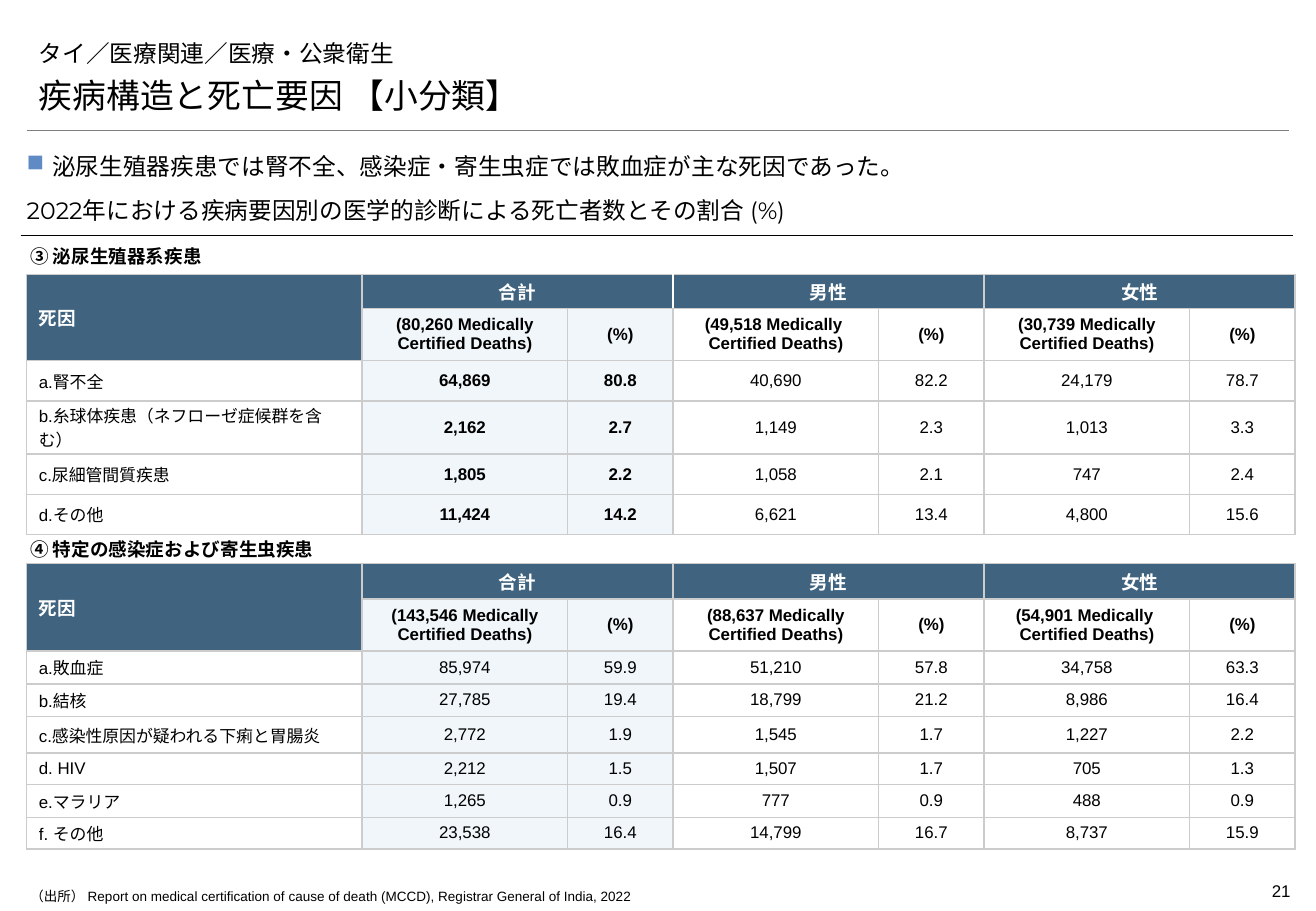
from dataclasses import dataclass
from lxml.etree import SubElement
from pptx import Presentation
from pptx.dml.color import RGBColor as RGB
from pptx.enum.text import MSO_ANCHOR as ANCHOR, PP_ALIGN as ALIGN
from pptx.oxml import parse_xml
from pptx.oxml.ns import nsdecls, qn
from pptx.util import Inches, Pt


@dataclass(frozen=True)
class Theme:
    black: str = "000000"
    white: str = "FFFFFF"
    head: str = "40647F"
    tint: str = "F0F6F9"
    grid: str = "CCCCCC"
    rule: str = "7F7F7F"
    bullet: str = "5F8AC3"
    sans: str = "Arial"
    display: str = "Montserrat"
    title: int = 20
    lead: int = 14
    label: int = 11
    body: int = 10
    note: int = 8


theme = Theme()
deck = Presentation()
deck.slide_width, deck.slide_height = Inches(10.83), Inches(7.5)
slide = deck.slides.add_slide(deck.slide_layouts[6])


def style(para, size, face=theme.sans, bold=False, color=theme.black, align=ALIGN.LEFT):
    para.alignment = align
    font = para.font
    font.size, font.name, font.bold = Pt(size), face, bold
    font.color.rgb = RGB.from_string(color)


def add_text(text, box, size, face=theme.sans, bold=False, align=ALIGN.LEFT,
             anchor=ANCHOR.TOP, pads=(0.1, 0.05, 0.1, 0.05)):
    frame = slide.shapes.add_textbox(*map(Inches, box)).text_frame
    frame.word_wrap, frame.vertical_anchor = True, anchor
    (frame.margin_left, frame.margin_top,
     frame.margin_right, frame.margin_bottom) = map(Inches, pads)
    para = frame.paragraphs[0]
    para.text = text
    style(para, size, face, bold, align=align)
    return para


# Title and heading lines
for left, right, top, color, width in [(0.22, 10.61, 1.07, theme.rule, 0.25),
                                       (0.17, 10.64, 1.94, theme.black, 0.75)]:
    line = slide.shapes.add_connector(1, Inches(left), Inches(top), Inches(right), Inches(top))
    line.line.color.rgb = RGB.from_string(color)
    line.line.width = Pt(width)
    SubElement(line._element.spPr, qn("a:effectLst"))

add_text("タイ／医療関連／医療・公衆衛生", (0.22, 0.26, 10.39, 0.34),
         theme.lead, theme.display, anchor=ANCHOR.BOTTOM)
add_text("疾病構造と死亡要因 【小分類】", (0.22, 0.56, 10.4, 0.44),
         theme.title, theme.display, anchor=ANCHOR.BOTTOM)
add_text("2022年における疾病要因別の医学的診断による死亡者数とその割合 (%)",
         (0.22, 1.62, 10.42, 0.31), theme.lead, theme.display,
         anchor=ANCHOR.BOTTOM, pads=(0, 0.05, 0, 0.08))

# Key message with a square bullet
point = add_text("泌尿生殖器疾患では腎不全、感染症・寄生虫症では敗血症が主な死因であった。",
                 (0.22, 1.23, 10.39, 0.24), theme.lead, align=ALIGN.JUSTIFY, pads=(0,) * 4)
point.line_spacing, point.space_after = 1.1, Pt(2)
props = point._p.get_or_add_pPr()
props.set("marL", str(Inches(0.21)))
props.set("indent", str(-Inches(0.21)))
mark = [f'<a:buClr {nsdecls("a")}><a:srgbClr val="{theme.bullet}"/></a:buClr>',
        f'<a:buChar {nsdecls("a")} char="■"/>']
spot = props.index(props.find(qn("a:spcAft"))) + 1
for step, xml in enumerate(mark):
    props.insert(spot + step, parse_xml(xml))

# Death tables: label, label top, table top, row heights, bold totals,
# white header divider, certified deaths, rows
tables = [
    ("③ 泌尿生殖器系疾患", 1.97, 2.26, [0.28, 0.43, 0.33, 0.44, 0.33, 0.33], True, True,
     ["(80,260 Medically Certified Deaths)", "(49,518 Medically \nCertified Deaths)",
      "(30,739 Medically Certified Deaths)"],
     [["a.腎不全", "64,869", "80.8", "40,690", "82.2", "24,179", "78.7"],
      ["b.糸球体疾患（ネフローゼ症候群を含む）", "2,162", "2.7", "1,149", "2.3", "1,013", "3.3"],
      ["c.尿細管間質疾患", "1,805", "2.2", "1,058", "2.1", "747", "2.4"],
      ["d.その他", "11,424", "14.2", "6,621", "13.4", "4,800", "15.6"]]),
    ("④ 特定の感染症および寄生虫疾患", 4.38, 4.64,
     [0.29, 0.43, 0.27, 0.27, 0.3, 0.26, 0.27, 0.26], False, False,
     ["(143,546 Medically Certified Deaths)", "(88,637 Medically Certified Deaths)",
      "(54,901 Medically \nCertified Deaths)"],
     [["a.敗血症", "85,974", "59.9", "51,210", "57.8", "34,758", "63.3"],
      ["b.結核", "27,785", "19.4", "18,799", "21.2", "8,986", "16.4"],
      ["c.感染性原因が疑われる下痢と胃腸炎", "2,772", "1.9", "1,545", "1.7", "1,227", "2.2"],
      ["d. HIV", "2,212", "1.5", "1,507", "1.7", "705", "1.3"],
      ["e.マラリア", "1,265", "0.9", "777", "0.9", "488", "0.9"],
      ["f. その他", "23,538", "16.4", "14,799", "16.7", "8,737", "15.9"]]),
]
widths = [2.76] + [1.69, 0.87] * 3
top_row = ["死因", "合計", "", "男性", "", "女性", ""]
white_edges = {(1, "R"), (2, "R"), (3, "L")}

for label, label_top, top, heights, strong, divide, deaths, rows in tables:
    add_text(label, (0.15, label_top, 10.4, 0.29), theme.label, bold=True)
    sub_row = [""] + [text for count in deaths for text in (count, "(%)")]
    grid = [top_row, sub_row] + rows
    table = slide.shapes.add_table(len(grid), len(widths), Inches(0.22), Inches(top),
                                   Inches(sum(widths)), Inches(sum(heights))).table
    table.first_row = table.horz_banding = False
    for col, width in zip(table.columns, widths):
        col.width = Inches(width)
    for row, height in zip(table.rows, heights):
        row.height = Inches(height)
    table.cell(0, 0).merge(table.cell(1, 0))
    for c in (1, 3, 5):
        table.cell(0, c).merge(table.cell(0, c + 1))

    for r, texts in enumerate(grid):
        for c, text in enumerate(texts):
            cell = table.cell(r, c)
            cell.vertical_anchor = ANCHOR.MIDDLE
            cell.margin_top = cell.margin_bottom = Inches(0.01)
            dark = r == 0 or (r == 1 and c == 0)
            total = c in (1, 2)
            if dark or total:
                cell.fill.solid()
                cell.fill.fore_color.rgb = RGB.from_string(theme.head if dark else theme.tint)
            else:
                cell.fill.background()
            if not cell.is_spanned:
                cell.text = text
            for para in cell.text_frame.paragraphs:
                style(para, theme.label if r == 0 else theme.body,
                      bold=r < 2 or (strong and total),
                      color=theme.white if dark else theme.black,
                      align=ALIGN.CENTER if c else ALIGN.LEFT)
            # Cell borders
            for place, side in enumerate("LRTB"):
                white = divide and r == 0 and (c, side) in white_edges
                edge = theme.white if white else theme.grid
                cell._tc.get_or_add_tcPr().insert(place, parse_xml(
                    f'<a:ln{side} {nsdecls("a")} w="{Pt(1)}"><a:solidFill>'
                    f'<a:srgbClr val="{edge}"/></a:solidFill></a:ln{side}>'))

# Footer
add_text("（出所） Report on medical certification of cause of death (MCCD), "
         "Registrar General of India, 2022", (0.25, 7.31, 9.69, 0.16), theme.note, pads=(0,) * 4)
add_text("21", (9.83, 7.2, 0.79, 0.27), theme.body, align=ALIGN.RIGHT, pads=(0, 0.05, 0, 0.05))

deck.save("out.pptx")
